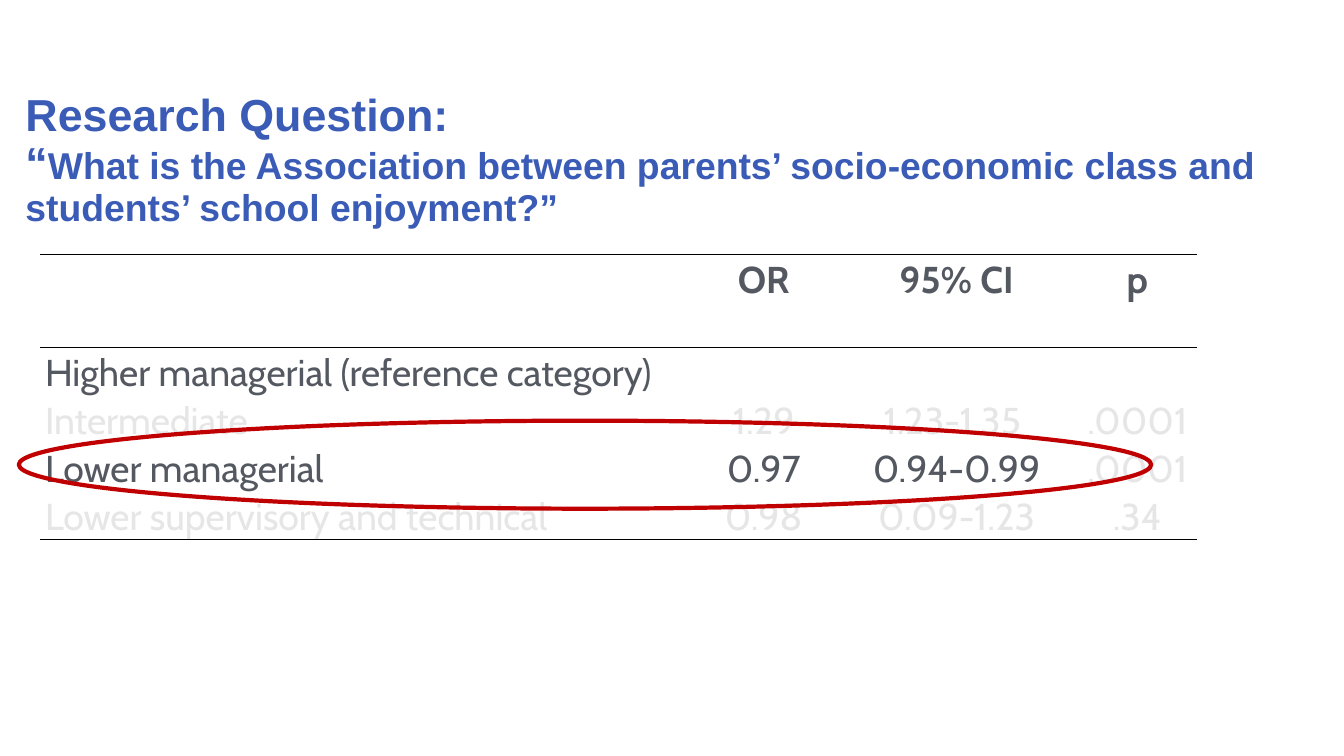
from lxml import etree
from pptx import Presentation
from pptx.dml.color import RGBColor
from pptx.enum.shapes import MSO_SHAPE
from pptx.enum.text import MSO_ANCHOR, PP_ALIGN
from pptx.oxml.ns import qn
from pptx.util import Inches, Pt

MIDDLE, TOP = MSO_ANCHOR.MIDDLE, MSO_ANCHOR.TOP
CENTER, LEFT = PP_ALIGN.CENTER, PP_ALIGN.LEFT
BLUE = RGBColor(0x3A, 0x5C, 0xB7)
GREY = RGBColor(0x54, 0x58, 0x60)
FADED = RGBColor(0xE7, 0xE6, 0xE6)
RED = RGBColor(0xC0, 0x00, 0x00)
BLACK = RGBColor(0, 0, 0)

HEADING = "Research Question:"
QUESTION = ("What is the Association between parents’ socio-economic class and "
            "students’ school enjoyment?”")
ROWS = [
    ("", "OR", "95% CI", "p"),
    ("Higher managerial (reference category)", "", "", ""),
    ("Intermediate", "1.29", "1.23-1.35 ", ".0001"),
    ("Lower managerial", "0.97", "0.94-0.99", ".0001"),
    ("Lower supervisory and technical", "0.98", "0.09-1.23", ".34"),
]
FADED_ROWS = {2, 4}
FADED_CELLS = {(3, 3)}
COLUMN_WIDTHS = [9.69, 2.15, 3.59, 1.79]
ROW_HEIGHTS = [1.38] + [0.63] * 4


def add_title(slide):
    box = slide.shapes.add_textbox(Inches(0.28), Inches(0.83), Inches(18.81), Inches(3.14))
    frame = box.text_frame
    frame.word_wrap = True
    frame.vertical_anchor = MIDDLE
    paragraph = frame.paragraphs[0]
    paragraph.line_spacing = 0.9
    font = paragraph.font
    font.name, font.size, font.bold = "Arial", Pt(48), True
    font.color.rgb = BLUE
    paragraph.add_run().text = HEADING
    paragraph.add_line_break()
    for text, size in (("“", 48), (QUESTION, 40)):
        run = paragraph.add_run()
        run.text = text
        run.font.size = Pt(size)


def set_borders(cell, ruled_sides):
    """Rule the given sides (T, B) in black and clear the others."""
    properties = cell._tc.get_or_add_tcPr()
    for side in "LRTB":
        line = etree.SubElement(properties, qn(f"a:ln{side}"), w=str(Pt(1)))
        if side in ruled_sides:
            fill = etree.SubElement(line, qn("a:solidFill"))
            etree.SubElement(fill, qn("a:srgbClr"), val=str(BLACK))
        else:
            etree.SubElement(line, qn("a:noFill"))


def fill_cell(cell, row, column, text):
    ruled_sides = {0: "TB", 1: "T", len(ROWS) - 1: "B"}.get(row, "")
    set_borders(cell, ruled_sides)
    cell.fill.background()
    cell.margin_left = cell.margin_right = Inches(0.07)
    cell.margin_top = cell.margin_bottom = 0
    cell.vertical_anchor = MIDDLE if row > 1 and column else TOP
    cell.text = text
    paragraph = cell.text_frame.paragraphs[0]
    paragraph.alignment = CENTER if column else LEFT
    paragraph.line_spacing = 1.07
    paragraph.space_after = Pt(8)
    font = paragraph.font
    font.name, font.size, font.bold = "Cabin", Pt(40), row == 0
    faded = row in FADED_ROWS or (row, column) in FADED_CELLS
    font.color.rgb = FADED if faded else GREY


def add_results_table(slide):
    table = slide.shapes.add_table(
        len(ROWS), len(COLUMN_WIDTHS), Inches(0.6), Inches(3.79),
        Inches(sum(COLUMN_WIDTHS)), Inches(sum(ROW_HEIGHTS))).table
    table.first_row = table.horz_banding = False
    for column, width in zip(table.columns, COLUMN_WIDTHS):
        column.width = Inches(width)
    for row, height in zip(table.rows, ROW_HEIGHTS):
        row.height = Inches(height)
    for row, texts in enumerate(ROWS):
        for column, text in enumerate(texts):
            fill_cell(table.cell(row, column), row, column, text)


def add_highlight(slide):
    ellipse = slide.shapes.add_shape(
        MSO_SHAPE.OVAL, Inches(0.28), Inches(6.26), Inches(16.85), Inches(1.31))
    ellipse.shadow.inherit = False
    ellipse.fill.background()
    ellipse.line.color.rgb = RED
    ellipse.line.width = Pt(4.5)


def main():
    presentation = Presentation()
    presentation.slide_width = Inches(20)
    presentation.slide_height = Inches(11.25)
    slide = presentation.slides.add_slide(presentation.slide_layouts[6])
    add_title(slide)
    add_results_table(slide)
    add_highlight(slide)
    presentation.save("out.pptx")


if __name__ == "__main__":
    main()
